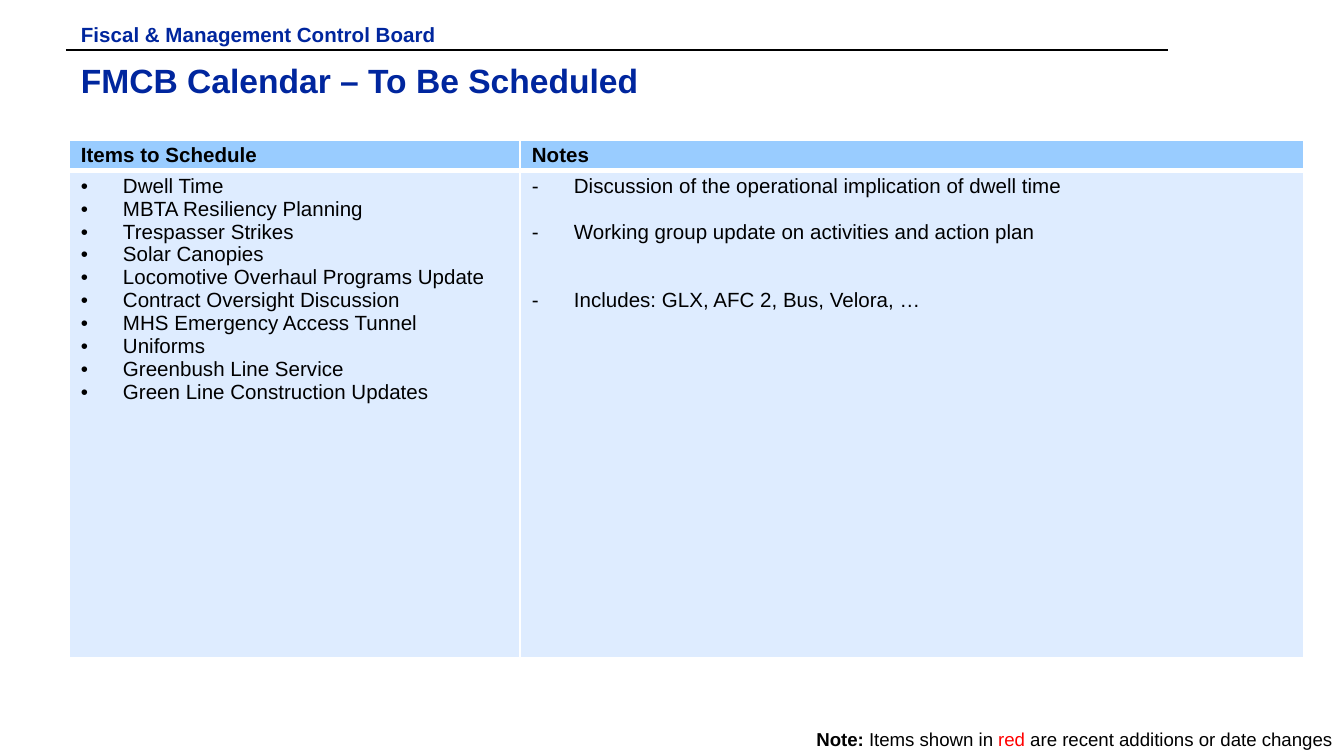
"""Build the FMCB calendar slide listing items still to be scheduled."""
from typing import NamedTuple

from lxml.etree import SubElement
from pptx import Presentation
from pptx.dml.color import RGBColor
from pptx.enum.shapes import MSO_CONNECTOR as Connector
from pptx.enum.text import MSO_ANCHOR as Anchor, PP_ALIGN as Align
from pptx.oxml.ns import qn
from pptx.util import Pt

PX = 6804
FONT = "Arial"
NAVY = RGBColor(0x00, 0x26, 0x9E)
BLACK = RGBColor(0x00, 0x00, 0x00)
RED = RGBColor(0xFF, 0x00, 0x00)
WHITE = RGBColor(0xFF, 0xFF, 0xFF)
HEADER_BLUE = RGBColor(0x99, 0xCC, 0xFF)
BODY_BLUE = RGBColor(0xDE, 0xEC, 0xFF)
HANGING = 42 * PX
LINE_HEIGHT = 12.3


class Span(NamedTuple):
    text: str
    size: int
    color: RGBColor = BLACK
    bold: bool = False


class Label(NamedTuple):
    x: int
    y: int
    w: int
    h: int
    spans: list[Span]
    align: Align = Align.LEFT


class Item(NamedTuple):
    text: str
    lines_before: int = 0


class Column(NamedTuple):
    heading: str
    width: int
    bullet: str
    items: list[Item]


LABELS = [
    Label(69, 54, 1124, 64, [Span("FMCB Calendar – To Be Scheduled", 18, NAVY, True)]),
    Label(69, 16, 458, 26, [Span("Fiscal & Management Control Board", 11, NAVY, True)]),
    Label(780, 722, 564, 34, [
        Span("Note: ", 10, bold=True),
        Span("Items shown in ", 10),
        Span("red", 10, RED),
        Span(" are recent additions or date changes", 10),
    ], Align.RIGHT),
]

COLUMNS = [
    Column("Items to Schedule", 451, "•", [
        Item("Dwell Time"),
        Item("MBTA Resiliency Planning"),
        Item("Trespasser Strikes"),
        Item("Solar Canopies"),
        Item("Locomotive Overhaul Programs Update"),
        Item("Contract Oversight Discussion"),
        Item("MHS Emergency Access Tunnel"),
        Item("Uniforms"),
        Item("Greenbush Line Service"),
        Item("Green Line Construction Updates"),
    ]),
    Column("Notes", 784, "-", [
        Item("Discussion of the operational implication of dwell time"),
        Item("Working group update on activities and action plan", 1),
        Item("Includes: GLX, AFC 2, Bus, Velora, …", 2),
    ]),
]


def add_span(p, span: Span) -> None:
    """Append one formatted run to a paragraph."""
    r = p.add_run()
    r.text = span.text
    r.font.name = FONT
    r.font.size = Pt(span.size)
    r.font.bold = span.bold
    r.font.color.rgb = span.color


def add_label(slide, label: Label) -> None:
    """Draw a text box holding one line of spans."""
    sp = slide.shapes.add_textbox(*(v * PX for v in label[:4]))
    tf = sp.text_frame
    tf.word_wrap = True
    tf.margin_left = tf.margin_right = 12 * PX
    tf.margin_top = tf.margin_bottom = 6 * PX
    p = tf.paragraphs[0]
    p.alignment = label.align
    for span in label.spans:
        add_span(p, span)


def add_rule(slide, x1: int, x2: int, y: int) -> None:
    """Draw the horizontal rule under the board name."""
    line = slide.shapes.add_connector(Connector.STRAIGHT, x1 * PX, y * PX, x2 * PX, y * PX)
    line.line.color.rgb = BLACK
    line.line.width = Pt(1)
    SubElement(line._element.spPr, qn("a:effectLst"))


def style_cell(cell, fill: RGBColor, top: int, bottom: int) -> None:
    """Set the margins, white borders and fill of a cell."""
    cell.margin_left = cell.margin_right = 12 * PX
    cell.margin_top = cell.margin_bottom = 4 * PX
    tc_pr = cell._tc.get_or_add_tcPr()
    for side, width in (("L", 1), ("R", 1), ("T", top), ("B", bottom)):
        border = SubElement(tc_pr, qn(f"a:ln{side}"), w=str(Pt(width)))
        solid = SubElement(border, qn("a:solidFill"))
        SubElement(solid, qn("a:srgbClr"), val=str(WHITE))
    cell.fill.solid()
    cell.fill.fore_color.rgb = fill


def add_items(tf, bullet: str, items: list[Item]) -> None:
    """Fill a text frame with a hanging bulleted list."""
    for i, item in enumerate(items):
        p = tf.add_paragraph() if i else tf.paragraphs[0]
        p_pr = p._p.get_or_add_pPr()
        p_pr.set("marL", str(HANGING))
        p_pr.set("indent", str(-HANGING))
        SubElement(p_pr, qn("a:buFont"), typeface=FONT)
        SubElement(p_pr, qn("a:buChar"), char=bullet)
        if item.lines_before:
            p.space_before = Pt(item.lines_before * LINE_HEIGHT)
        add_span(p, Span(item.text, 11))


def add_schedule(slide, x: int, y: int, row_heights: tuple[int, int]) -> None:
    """Draw the table of items and notes."""
    width = sum(column.width for column in COLUMNS)
    frame = slide.shapes.add_table(
        2, len(COLUMNS), x * PX, y * PX, width * PX, sum(row_heights) * PX)
    table = frame.table
    for row, height in zip(table.rows, row_heights):
        row.height = height * PX
    for i, column in enumerate(COLUMNS):
        table.columns[i].width = column.width * PX
        head, body = table.cell(0, i), table.cell(1, i)
        style_cell(head, HEADER_BLUE, 1, 3)
        head.vertical_anchor = Anchor.MIDDLE
        add_span(head.text_frame.paragraphs[0], Span(column.heading, 11, bold=True))
        style_cell(body, BODY_BLUE, 3, 1)
        add_items(body.text_frame, column.bullet, column.items)


def main() -> None:
    """Assemble and save the slide."""
    prs = Presentation()
    prs.slide_width, prs.slide_height = 1344 * PX, 756 * PX
    s = prs.slides.add_slide(prs.slide_layouts[6])
    add_rule(s, 66, 1168, 50)
    add_schedule(s, 69, 140, (30, 487))
    for label in LABELS:
        add_label(s, label)
    prs.save("out.pptx")


if __name__ == "__main__":
    main()
